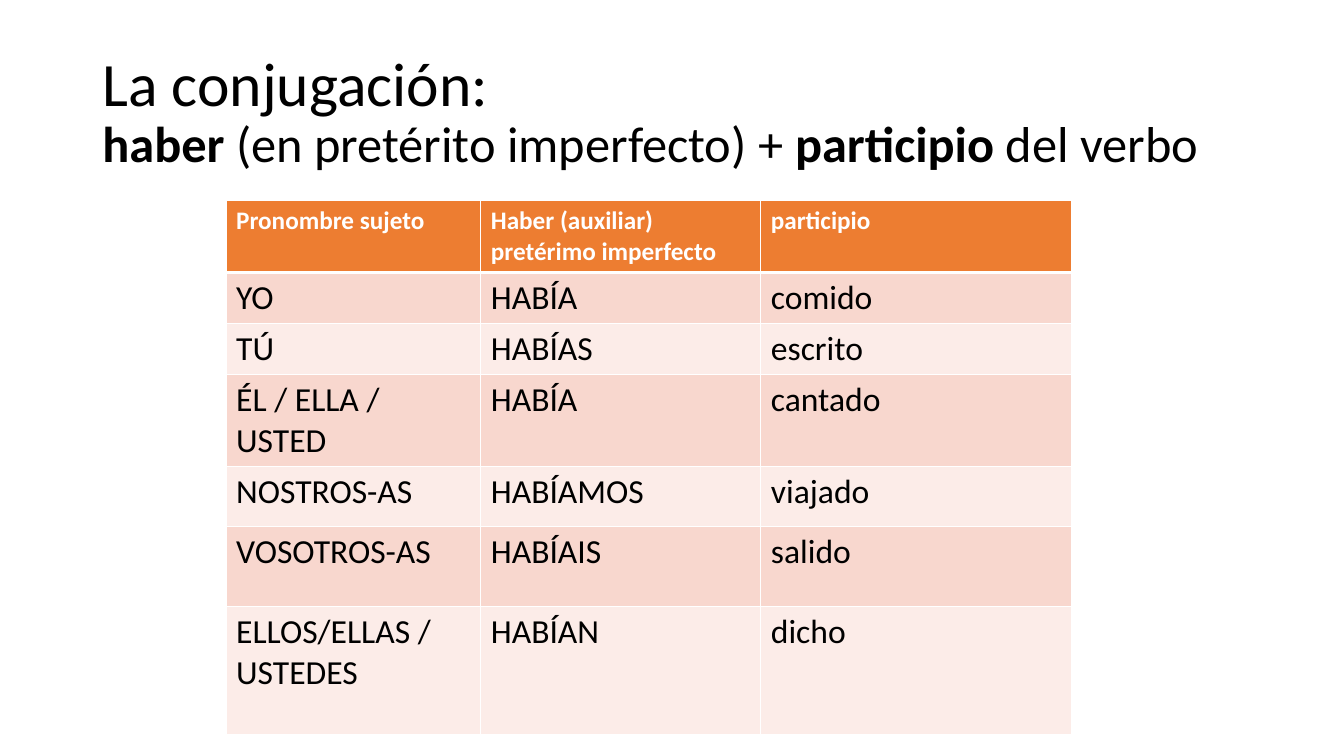
from lxml import etree
from pptx import Presentation
from pptx.dml.color import RGBColor
from pptx.enum import text
from pptx.oxml import ns
from pptx.util import Pt

FONT = "Calibri"
TITLE = "La conjugación: "
FORMULA = [
    ("haber", True),
    (" (en pretérito imperfecto) + ", False),
    ("participio", True),
    (" del verbo", False),
]
ROWS = [
    ("Pronombre sujeto", "Haber (auxiliar) pretérimo imperfecto", "participio"),
    ("YO", "HABÍA", "comido"),
    ("TÚ", "HABÍAS", "escrito"),
    ("ÉL / ELLA / USTED", "HABÍA", "cantado"),
    ("NOSTROS-AS", "HABÍAMOS", "viajado"),
    ("VOSOTROS-AS", "HABÍAIS", "salido"),
    ("ELLOS/ELLAS / USTEDES", "HABÍAN", "dicho"),
]
COL_WIDTHS = [182, 200, 222]
ROW_HEIGHTS = [47.5, 34, 34, 61, 42.5, 57, 91.5]
HEADER_FILL = "ED7D31"
BAND_FILLS = ["FCECE8", "F8D7CE"]
WHITE, BLACK = "FFFFFF", "000000"


def color(value):
    return RGBColor.from_string(value)


def add_run(p, words, size, bold, ink):
    r = p.add_run()
    r.text = words
    r.font.name = FONT
    r.font.size = Pt(size)
    r.font.bold = bold
    r.font.color.rgb = color(ink)


def set_borders(cell, widths):
    tc_pr = cell._tc.get_or_add_tcPr()
    for i, (side, width) in enumerate(widths.items()):
        ln = etree.Element(ns.qn(f"a:ln{side}"), w=str(Pt(width)))
        fill = etree.SubElement(ln, ns.qn("a:solidFill"))
        etree.SubElement(fill, ns.qn("a:srgbClr"), val=WHITE)
        tc_pr.insert(i, ln)


def add_title(s):
    sp = s.shapes.title
    sp.left, sp.top, sp.width, sp.height = Pt(66), Pt(28.8), Pt(828), Pt(104.4)
    tf = sp.text_frame
    tf.word_wrap = True
    tf.auto_size = text.MSO_AUTO_SIZE.NONE
    tf.vertical_anchor = text.MSO_ANCHOR.MIDDLE
    p = tf.paragraphs[0]
    p.alignment = text.PP_ALIGN.LEFT
    p.line_spacing = 0.9
    add_run(p, TITLE, 44, False, BLACK)
    p.add_line_break()
    for words, bold in FORMULA:
        add_run(p, words, 36, bold, BLACK)


def add_conjugation(s):
    frame = s.shapes.add_table(
        len(ROWS), len(COL_WIDTHS), Pt(161.5), Pt(143.5),
        Pt(sum(COL_WIDTHS)), Pt(sum(ROW_HEIGHTS)))
    table = frame.table
    for column, width in zip(table.columns, COL_WIDTHS):
        column.width = Pt(width)
    for i, (row, height, words) in enumerate(zip(table.rows, ROW_HEIGHTS, ROWS)):
        row.height = Pt(height)
        header = i == 0
        borders = {"L": 1, "R": 1, "T": 3 if i == 1 else 1, "B": 3 if header else 1}
        for cell, word in zip(row.cells, words):
            cell.fill.solid()
            cell.fill.fore_color.rgb = color(HEADER_FILL if header else BAND_FILLS[i % 2])
            set_borders(cell, borders)
            add_run(cell.text_frame.paragraphs[0], word,
                    18 if header else 24, header, WHITE if header else BLACK)


def main():
    prs = Presentation()
    prs.slide_width, prs.slide_height = Pt(960), Pt(540)
    s = prs.slides.add_slide(prs.slide_layouts[5])
    add_title(s)
    add_conjugation(s)
    prs.save("out.pptx")


if __name__ == "__main__":
    main()
